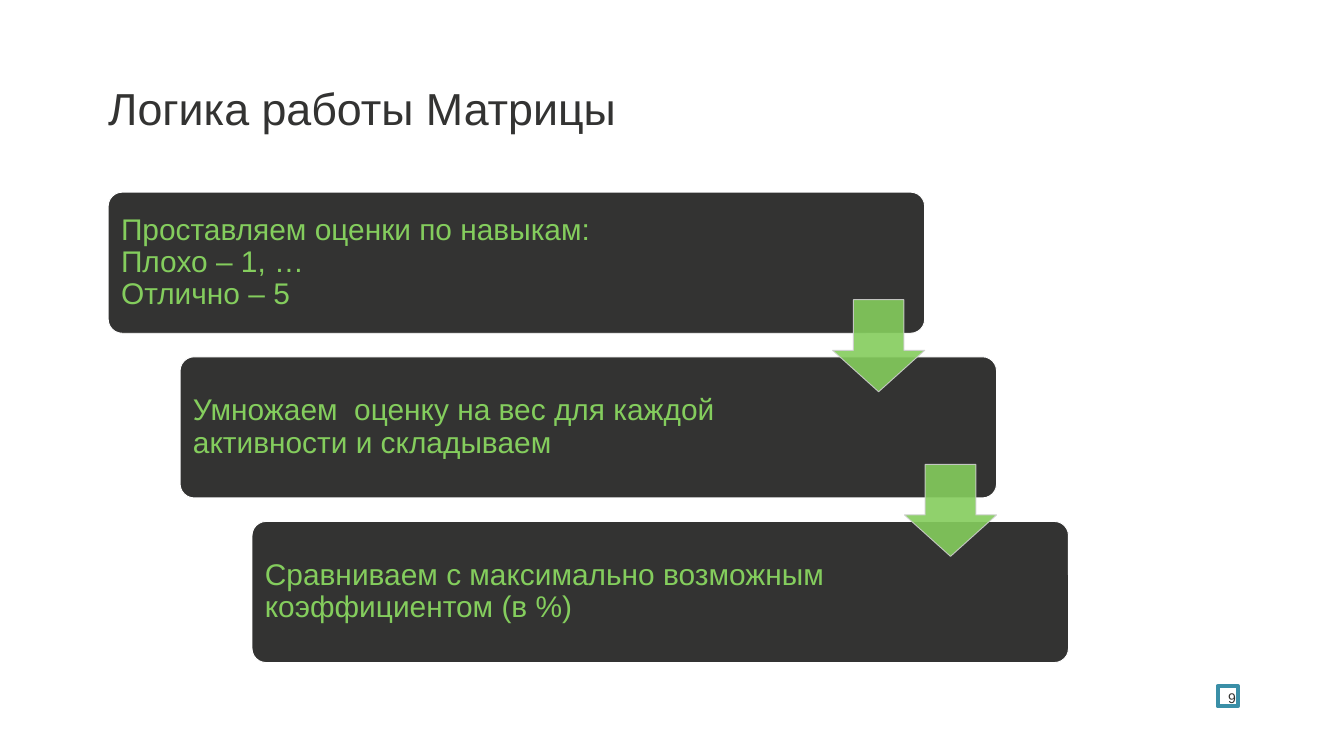
from lxml.etree import SubElement
from pptx import Presentation
from pptx.dml.color import RGBColor
from pptx.enum.shapes import MSO_SHAPE
from pptx.enum.text import MSO_ANCHOR, PP_ALIGN
from pptx.oxml.ns import qn
from pptx.util import Inches, Pt

FONT = "Arial"
DARK, GREEN, WHITE = "333332", "84CD5D", "FFFFFF"
ARROW_EDGE, TEAL = "CECECE", "3A8FA7"

STEPS = [
    "Проставляем оценки по навыкам: \nПлохо – 1, … \nОтлично – 5",
    "Умножаем  оценку на вес для каждой активности и складываем",
    "Сравниваем с максимально возможным коэффициентом (в %)",
]
FIRST_LEFT, FIRST_TOP = 1.61, 2.86
STEP_WIDTH, STEP_HEIGHT = 12.15, 2.1
SHIFT_X, SHIFT_Y = 1.07, 2.45
ARROW_SIZE = 1.37


def color(hex_string):
    return RGBColor.from_string(hex_string)


def set_text(frame, text, size, text_color, anchor=MSO_ANCHOR.TOP,
             align=PP_ALIGN.LEFT, spacing=1.0, margins=(0, 0, 0, 0)):
    """Fill a frame with one paragraph; margins are left, top, right, bottom."""
    frame.word_wrap = True
    frame.vertical_anchor = anchor
    (frame.margin_left, frame.margin_top,
     frame.margin_right, frame.margin_bottom) = map(Inches, margins)
    paragraph = frame.paragraphs[0]
    paragraph.text = text
    paragraph.alignment = align
    paragraph.line_spacing = spacing
    paragraph.font.name = FONT
    paragraph.font.size = Pt(size)
    paragraph.font.color.rgb = color(text_color)


def add_label(slide, left, top, width, height, text, size, **layout):
    label = slide.shapes.add_textbox(
        Inches(left), Inches(top), Inches(width), Inches(height))
    set_text(label.text_frame, text, size, DARK, **layout)


def add_outlined(slide, preset, left, top, width, height, fill, line, line_width):
    shape = slide.shapes.add_shape(
        preset, Inches(left), Inches(top), Inches(width), Inches(height))
    shape.shadow.inherit = False
    if fill:
        shape.fill.solid()
        shape.fill.fore_color.rgb = color(fill)
    else:
        shape.fill.background()
    shape.line.color.rgb = color(line)
    shape.line.width = Pt(line_width)
    return shape


def add_step(slide, index, text):
    step = add_outlined(
        slide, MSO_SHAPE.ROUNDED_RECTANGLE,
        FIRST_LEFT + index * SHIFT_X, FIRST_TOP + index * SHIFT_Y,
        STEP_WIDTH, STEP_HEIGHT, DARK, WHITE, 1)
    step.adjustments[0] = 0.1
    # The wide right margin keeps the text clear of the arrows.
    set_text(step.text_frame, text, 32, GREEN, anchor=MSO_ANCHOR.MIDDLE,
             spacing=0.9, margins=(0.13, 0.13, 2.57, 0.13))


def add_step_arrow(slide, index):
    """Add the arrow from a step to the next, flush with the step's right side."""
    left = FIRST_LEFT + index * SHIFT_X + STEP_WIDTH - ARROW_SIZE
    top = FIRST_TOP + index * SHIFT_Y + 1.6
    arrow = add_outlined(slide, MSO_SHAPE.DOWN_ARROW, left, top,
                         ARROW_SIZE, ARROW_SIZE, GREEN, ARROW_EDGE, 1)
    arrow.adjustments[0] = 0.55
    arrow.adjustments[1] = 0.45
    # Fill and line are both 90% opaque.
    for rgb in arrow.element.spPr.iter(qn("a:srgbClr")):
        SubElement(rgb, qn("a:alpha"), val="90000")


def main():
    presentation = Presentation()
    presentation.slide_width = Inches(20)
    presentation.slide_height = Inches(11.25)
    slide = presentation.slides.add_slide(presentation.slide_layouts[6])

    for index, text in enumerate(STEPS):
        add_step(slide, index, text)
    for index in range(len(STEPS) - 1):
        add_step_arrow(slide, index)

    add_label(slide, FIRST_LEFT, 1.25, 12.96, 0.93,
              "Логика работы Матрицы", 48, spacing=0.96)
    add_label(slide, 16.95, 9.88, 1.44, 0.63, "9", 15,
              anchor=MSO_ANCHOR.BOTTOM, align=PP_ALIGN.RIGHT)
    add_outlined(slide, MSO_SHAPE.RECTANGLE, 18.12, 10.21, 0.3, 0.3,
                 None, TEAL, 4.5)

    presentation.save("out.pptx")


if __name__ == "__main__":
    main()
